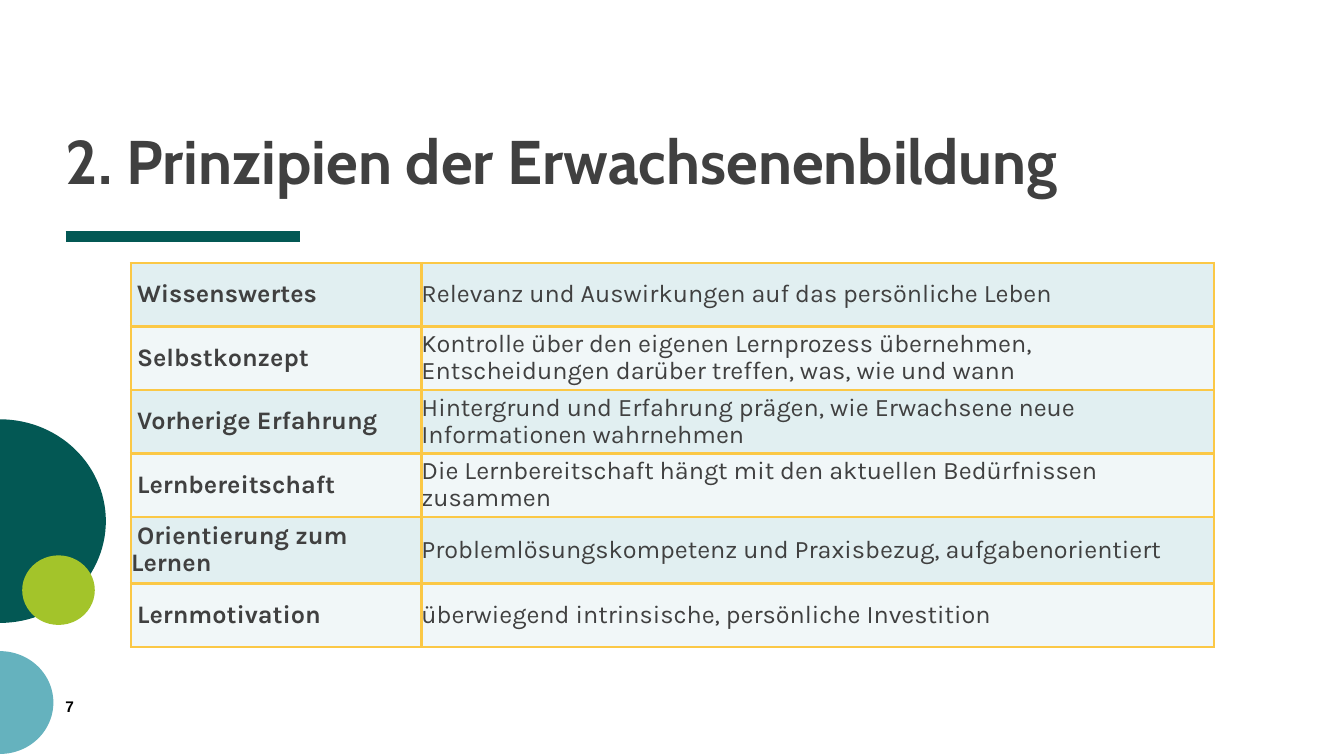
import math

import lxml.etree
import pptx
import pptx.dml.color
import pptx.enum.shapes
import pptx.enum.text
import pptx.oxml
import pptx.oxml.ns
import pptx.util

Inches = pptx.util.Inches
MIDDLE = pptx.enum.text.MSO_ANCHOR.MIDDLE
BOTTOM = pptx.enum.text.MSO_ANCHOR.BOTTOM
TOP = pptx.enum.text.MSO_ANCHOR.TOP

DARK_GREEN, LIME, BLUE = "035854", "A3C42A", "65B2BE"
TEXT_GREY, BORDER_YELLOW = "404040", "FBC846"
ROW_FILLS = ["E1EFF1", "F1F7F8"]

PRINCIPLES = [
    ("Wissenswertes", "Relevanz und Auswirkungen auf das persönliche Leben"),
    ("Selbstkonzept", "Kontrolle über den eigenen Lernprozess übernehmen, "
                      "Entscheidungen darüber treffen, was, wie und wann"),
    ("Vorherige Erfahrung", "Hintergrund und Erfahrung prägen, wie Erwachsene "
                            "neue Informationen wahrnehmen"),
    ("Lernbereitschaft", "Die Lernbereitschaft hängt mit den aktuellen "
                         "Bedürfnissen zusammen"),
    ("Orientierung zum Lernen", "Problemlösungskompetenz und Praxisbezug, "
                                "aufgabenorientiert"),
    ("Lernmotivation", "überwiegend intrinsische, persönliche Investition"),
]
COLUMN_WIDTHS = [2.88, 7.86]
ROW_HEIGHTS = [0.63, 0.63, 0.63, 0.63, 0.66, 0.63]


def color(hex_string):
    return pptx.dml.color.RGBColor.from_string(hex_string)


def set_text(frame, text, font, size, hex_color=TEXT_GREY, bold=False,
             line_spacing=1.0, indent=0):
    """Fill the first paragraph of a text frame."""
    paragraph = frame.paragraphs[0]
    paragraph.alignment = pptx.enum.text.PP_ALIGN.LEFT
    paragraph.line_spacing = line_spacing
    paragraph.space_before = pptx.util.Pt(0)
    if indent:
        paragraph._p.get_or_add_pPr().set("indent", str(Inches(indent)))
    run = paragraph.add_run()
    run.text = text
    run.font.name = font
    run.font.size = pptx.util.Pt(size)
    run.font.bold = bold
    run.font.color.rgb = color(hex_color)


def clear_margins(target):
    target.margin_left = target.margin_right = 0
    target.margin_top = target.margin_bottom = 0


def paint(shape, hex_color):
    shape.shadow.inherit = False
    shape.fill.solid()
    shape.fill.fore_color.rgb = color(hex_color)
    shape.line.fill.background()


def add_half_disc(slide, center_y, radius_x, radius_y, hex_color):
    """Draw the right half of an ellipse on the left slide edge."""
    angles = [math.radians(degrees) for degrees in range(-90, 91, 3)]
    points = [(Inches(radius_x * math.cos(angle)),
               Inches(center_y + radius_y * math.sin(angle))) for angle in angles]
    builder = slide.shapes.build_freeform(*points[0])
    builder.add_line_segments(points[1:], close=True)
    paint(builder.convert_to_shape(), hex_color)


def add_disc(slide, left, top, width, height, hex_color):
    disc = slide.shapes.add_shape(
        pptx.enum.shapes.MSO_SHAPE.OVAL,
        Inches(left), Inches(top), Inches(width), Inches(height))
    paint(disc, hex_color)


def add_rule(slide, left, right, y, hex_color, width):
    rule = slide.shapes.add_connector(
        pptx.enum.shapes.MSO_CONNECTOR.STRAIGHT,
        Inches(left), Inches(y), Inches(right), Inches(y))
    rule.line.color.rgb = color(hex_color)
    rule.line.width = pptx.util.Pt(width)
    lxml.etree.SubElement(rule._element.spPr, pptx.oxml.ns.qn("a:effectLst"))


def place_title(slide, text):
    title = slide.shapes.title
    title.left, title.top = Inches(0.65), Inches(0.11)
    title.width, title.height = Inches(11.89), Inches(1.84)
    frame = title.text_frame
    clear_margins(frame)
    frame.word_wrap = True
    frame.auto_size = pptx.enum.text.MSO_AUTO_SIZE.NONE
    frame.vertical_anchor = BOTTOM
    set_text(frame, text, font="Cabin", size=44, bold=True, line_spacing=0.8)


def add_slide_number(slide, text):
    box = slide.shapes.add_textbox(
        Inches(0.65), Inches(6.92), Inches(0.14), Inches(0.18))
    frame = box.text_frame
    clear_margins(frame)
    frame.word_wrap = False
    frame.vertical_anchor = TOP
    set_text(frame, text, font="Arial", size=11, hex_color="000000", bold=True)


def set_borders(cell, hex_color, width):
    properties = cell._tc.get_or_add_tcPr()
    for position, side in enumerate(["lnL", "lnR", "lnT", "lnB"]):
        border = pptx.oxml.parse_xml(
            f'<a:{side} {pptx.oxml.ns.nsdecls("a")} w="{pptx.util.Pt(width)}">'
            f'<a:solidFill><a:srgbClr val="{hex_color}"/></a:solidFill></a:{side}>')
        properties.insert(position, border)


def add_principles_table(slide, left, top):
    table = slide.shapes.add_table(
        len(PRINCIPLES), len(COLUMN_WIDTHS), Inches(left), Inches(top),
        Inches(sum(COLUMN_WIDTHS)), Inches(sum(ROW_HEIGHTS))).table
    table.first_row = False
    table.horz_banding = False
    for column, width in zip(table.columns, COLUMN_WIDTHS):
        column.width = Inches(width)
    for row_index, texts in enumerate(PRINCIPLES):
        table.rows[row_index].height = Inches(ROW_HEIGHTS[row_index])
        for column_index, text in enumerate(texts):
            cell = table.cell(row_index, column_index)
            is_label = column_index == 0
            clear_margins(cell)
            cell.vertical_anchor = MIDDLE
            cell.fill.solid()
            cell.fill.fore_color.rgb = color(ROW_FILLS[row_index % 2])
            set_borders(cell, BORDER_YELLOW, 2)
            set_text(cell.text_frame, text, font="Karla", size=18, bold=is_label,
                     line_spacing=0.9, indent=0.06 if is_label else 0)


def main():
    presentation = pptx.Presentation()
    presentation.slide_width = Inches(13.33)
    presentation.slide_height = Inches(7.5)
    slide = presentation.slides.add_slide(presentation.slide_layouts[5])

    # Decoration on the left edge
    add_rule(slide, 0.65, 2.98, 2.35, DARK_GREEN, 8)
    add_half_disc(slide, 5.17, 1.05, 1.01, DARK_GREEN)
    add_half_disc(slide, 6.97, 0.53, 0.51, BLUE)
    add_disc(slide, 0.22, 5.51, 0.72, 0.69, LIME)

    # Content
    place_title(slide, "2. Prinzipien der Erwachsenenbildung")
    add_principles_table(slide, 1.3, 2.61)
    add_slide_number(slide, "7")

    presentation.save("out.pptx")


if __name__ == "__main__":
    main()
